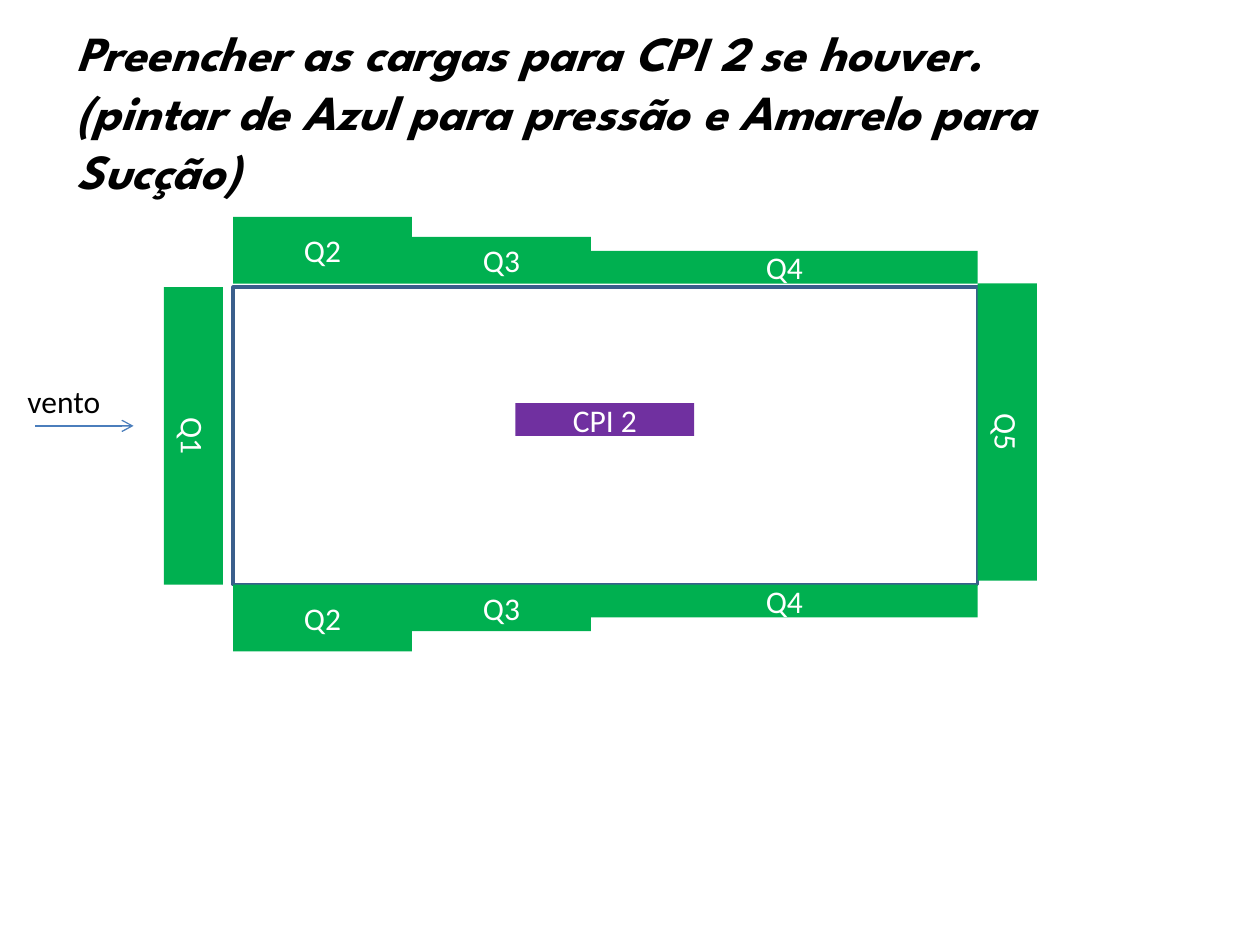
"""Build the slide of wind loads around a building plan for CPI 2."""
import pptx
import pptx.dml.color
import pptx.enum.shapes
import pptx.enum.text
import pptx.oxml.ns
import pptx.util
from lxml import etree

Inches = pptx.util.Inches
Pt = pptx.util.Pt
COLORS = {"text": "000000", "label": "FFFFFF", "load": "00B050",
          "internal": "7030A0", "wall": "3A5F8C", "wind": "4B7EBC"}


def style_text(frame, size, font, color, align):
    paragraph = frame.paragraphs[0]
    paragraph.alignment = align
    run = paragraph.runs[0]
    run.font.size = Pt(size)
    run.font.name = font
    run.font.color.rgb = pptx.dml.color.RGBColor.from_string(COLORS[color])
    return run


def add_panel(label, left, top, width, height, color, turned):
    if turned:
        left, top = left + (width - height) / 2, top + (height - width) / 2
        width, height = height, width
    panel = slide.shapes.add_shape(
        pptx.enum.shapes.MSO_SHAPE.RECTANGLE,
        Inches(left), Inches(top), Inches(width), Inches(height))
    panel.rotation = 270 if turned else 0
    panel.shadow.inherit = False
    panel.fill.solid()
    panel.fill.fore_color.rgb = pptx.dml.color.RGBColor.from_string(COLORS[color])
    panel.line.fill.background()
    frame = panel.text_frame
    frame.text = label
    frame.vertical_anchor = pptx.enum.text.MSO_ANCHOR.MIDDLE
    frame._txBody.bodyPr.set("vert", "vert")
    style_text(frame, 18, "Calibri", "label", pptx.enum.text.PP_ALIGN.CENTER)


presentation = pptx.Presentation()
presentation.slide_width = Inches(10)
presentation.slide_height = Inches(7.5)
slide = presentation.slides.add_slide(presentation.slide_layouts[5])

instruction = slide.shapes.title
instruction.left, instruction.top = Inches(0.51), Inches(0.13)
instruction.width, instruction.height = Inches(8.11), Inches(1.51)
instruction.text_frame.text = ("Preencher as cargas para CPI 2 se houver. "
                               "(pintar de Azul para pressão e Amarelo para Sucção)")
instruction.text_frame.vertical_anchor = pptx.enum.text.MSO_ANCHOR.TOP
instruction.text_frame.auto_size = pptx.enum.text.MSO_AUTO_SIZE.NONE
instruction_run = style_text(instruction.text_frame, 28, "League Spartan", "text",
                             pptx.enum.text.PP_ALIGN.LEFT)
instruction_run.font.bold = True
instruction_run.font.italic = True

plan_left, plan_top, plan_width, plan_height = 1.85, 2.28, 5.91, 2.36
building = slide.shapes.add_shape(
    pptx.enum.shapes.MSO_SHAPE.RECTANGLE, Inches(plan_left), Inches(plan_top),
    Inches(plan_width), Inches(plan_height))
building.shadow.inherit = False
building.fill.background()
building.line.color.rgb = pptx.dml.color.RGBColor.from_string(COLORS["wall"])
building.line.width = Pt(2)

wind = slide.shapes.add_connector(
    pptx.enum.shapes.MSO_CONNECTOR.STRAIGHT,
    Inches(0.28), Inches(3.38), Inches(1.06), Inches(3.38))
wind.line.color.rgb = pptx.dml.color.RGBColor.from_string(COLORS["wind"])
wind.line.width = Pt(0.75)
etree.SubElement(wind.line._get_or_add_ln(), pptx.oxml.ns.qn("a:tailEnd"), type="arrow")
etree.SubElement(wind._element.spPr, pptx.oxml.ns.qn("a:effectLst"))

wind_label = slide.shapes.add_textbox(Inches(0.12), Inches(2.98), Inches(0.94), Inches(0.4))
wind_label.text_frame.word_wrap = True
wind_label.text_frame.text = "vento"
style_text(wind_label.text_frame, 18, "Calibri", "text", pptx.enum.text.PP_ALIGN.LEFT)

add_panel("Q1", 1.3, plan_top, 0.47, plan_height, "load", False)
for side in ("upper", "lower"):
    left = plan_left
    for label, width, height in (("Q2", 1.42, 0.53), ("Q3", 1.42, 0.37), ("Q4", 3.07, 0.26)):
        top = 2.25 - height if side == "upper" else plan_top + plan_height
        add_panel(label, left, top, width, height, "load", True)
        left += width
add_panel("Q5", plan_left + plan_width, 2.25, 0.47, plan_height, "load", False)
add_panel("CPI 2", 4.09, 3.2, 1.42, 0.26, "internal", True)

presentation.save("out.pptx")
